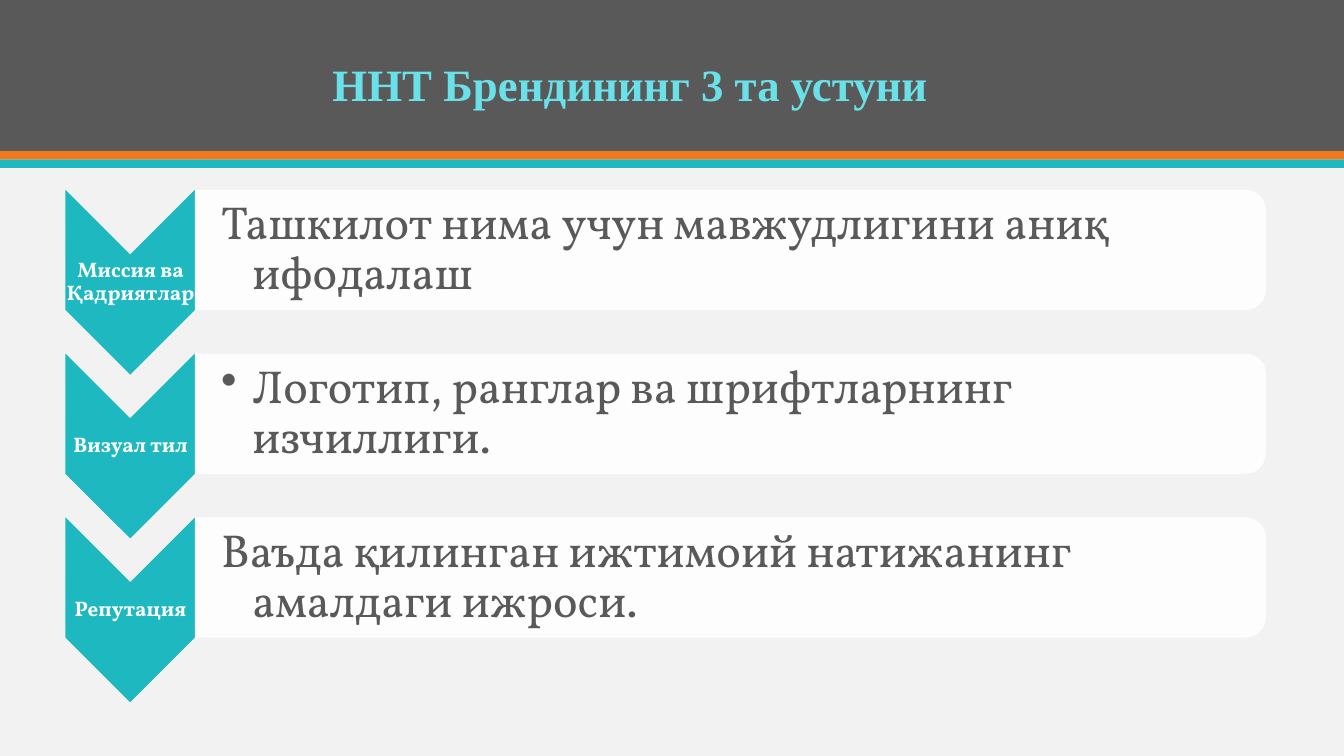
import pptx
import pptx.dml.color
import pptx.enum.shapes
import pptx.enum.text
import pptx.oxml.ns
import pptx.util
from lxml import etree

SHAPES = pptx.enum.shapes.MSO_SHAPE
ALIGN = pptx.enum.text.PP_ALIGN
ANCHOR = pptx.enum.text.MSO_ANCHOR

COLUMNS, ROWS = 160, 90
GREY, TEAL, ORANGE, WHITE = "595959", "1EB8C1", "EF7920", "FFFFFF"

PILLARS = [
    ("Миссия ва Қадриятлар", "Ташкилот нима учун мавжудлигини аниқ ифодалаш", None),
    ("Визуал тил", "Логотип, ранглар ва шрифтларнинг изчиллиги.", "•"),
    ("Репутация", "Ваъда қилинган ижтимоий натижанинг амалдаги ижроси.", None),
]


def color(hex_value):
    return pptx.dml.color.RGBColor.from_string(hex_value)


class Deck:
    """Holds the style and the current slide; lengths are grid columns and rows."""

    font = "Vollkorn"

    def __init__(self):
        self.file = pptx.Presentation()
        self.file.slide_width = pptx.util.Inches(13.33)
        self.file.slide_height = pptx.util.Inches(7.5)
        self.slide = self.file.slides.add_slide(self.file.slide_layouts[6])

    def x(self, columns):
        return round(self.file.slide_width * columns / COLUMNS)

    def y(self, rows):
        return round(self.file.slide_height * rows / ROWS)

    def background(self, fill):
        self.slide.background.fill.solid()
        self.slide.background.fill.fore_color.rgb = color(fill)

    def block(self, kind, left, top, width, height, fill, turned=False, opacity=None):
        """Fill the given area; a turned block is rotated a quarter to cover it."""
        x, y, w, h = self.x(left), self.y(top), self.x(width), self.y(height)
        if turned:
            x, y, w, h = x + (w - h) // 2, y + (h - w) // 2, h, w
        block = self.slide.shapes.add_shape(kind, x, y, w, h)
        block.rotation = 90 if turned else 0
        block.shadow.inherit = False
        block.line.fill.background()
        block.fill.solid()
        block.fill.fore_color.rgb = color(fill)
        if opacity is not None:
            tint = block.fill._xPr.find(".//" + pptx.oxml.ns.qn("a:srgbClr"))
            etree.SubElement(tint, pptx.oxml.ns.qn("a:alpha"), val=str(opacity * 1000))

    def text(self, words, left, top, width, height, size, ink, bold=False, font=None,
             align=ALIGN.LEFT, anchor=ANCHOR.MIDDLE, margins=(0.1, 0.05),
             left_margin=None, hanging=0, bullet=None):
        box = self.slide.shapes.add_textbox(
            self.x(left), self.y(top), self.x(width), self.y(height))
        frame = box.text_frame
        frame.word_wrap = True
        frame.vertical_anchor = anchor
        side, end = (pptx.util.Inches(margin) for margin in margins)
        frame.margin_left = side if left_margin is None else pptx.util.Inches(left_margin)
        frame.margin_right = side
        frame.margin_top = frame.margin_bottom = end

        paragraph = frame.paragraphs[0]
        paragraph.text = words
        paragraph.alignment = align
        paragraph.line_spacing = 0.9
        properties = paragraph._p.get_or_add_pPr()
        if hanging:
            indent = pptx.util.Inches(hanging)
            properties.set("marL", str(indent))
            properties.set("indent", str(-indent))
        if bullet:
            etree.SubElement(properties, pptx.oxml.ns.qn("a:buChar"), char=bullet)
        paragraph.font.name = font or self.font
        paragraph.font.size = pptx.util.Pt(size)
        paragraph.font.bold = bold
        paragraph.font.color.rgb = color(ink)


def main():
    deck = Deck()
    deck.background("F2F2F2")

    # Header band with its two stripes
    deck.block(SHAPES.RECTANGLE, 0, 0, COLUMNS, 18, GREY)
    for row, stripe in enumerate((ORANGE, TEAL), start=18):
        deck.block(SHAPES.RECTANGLE, 0, row, COLUMNS, 1, stripe)
    deck.text("ННТ Брендининг 3 та устуни", 38.4, 0.2, 120, 13.6, 32, "6AE1E8",
              bold=True, font="Times New Roman", anchor=ANCHOR.BOTTOM)

    # Three pillars: a chevron with its label, and a bar with its statement
    left, first_top, pitch = 7.8, 22.6, 19.5
    chevron_width, bar_width = 15.4, 127.5
    bar_left = left + chevron_width
    for index, (label, statement, bullet) in enumerate(PILLARS):
        top = first_top + index * pitch
        deck.block(SHAPES.CHEVRON, left, top, chevron_width, 22, TEAL, turned=True)
        deck.text(label, left, top + 7.7, chevron_width + 0.1, 6.6, 15, WHITE, bold=True,
                  align=ALIGN.CENTER, margins=(0.01, 0.01))
        deck.block(SHAPES.ROUND_2_SAME_RECTANGLE, bar_left, top, bar_width, 14.3, WHITE,
                   turned=True, opacity=90)
        deck.text(statement, bar_left, top + 0.65, bar_width - 0.7, 13, 33, GREY,
                  margins=(0.02, 0.02), left_margin=0.26, hanging=0.31, bullet=bullet)

    deck.file.save("out.pptx")


if __name__ == "__main__":
    main()
